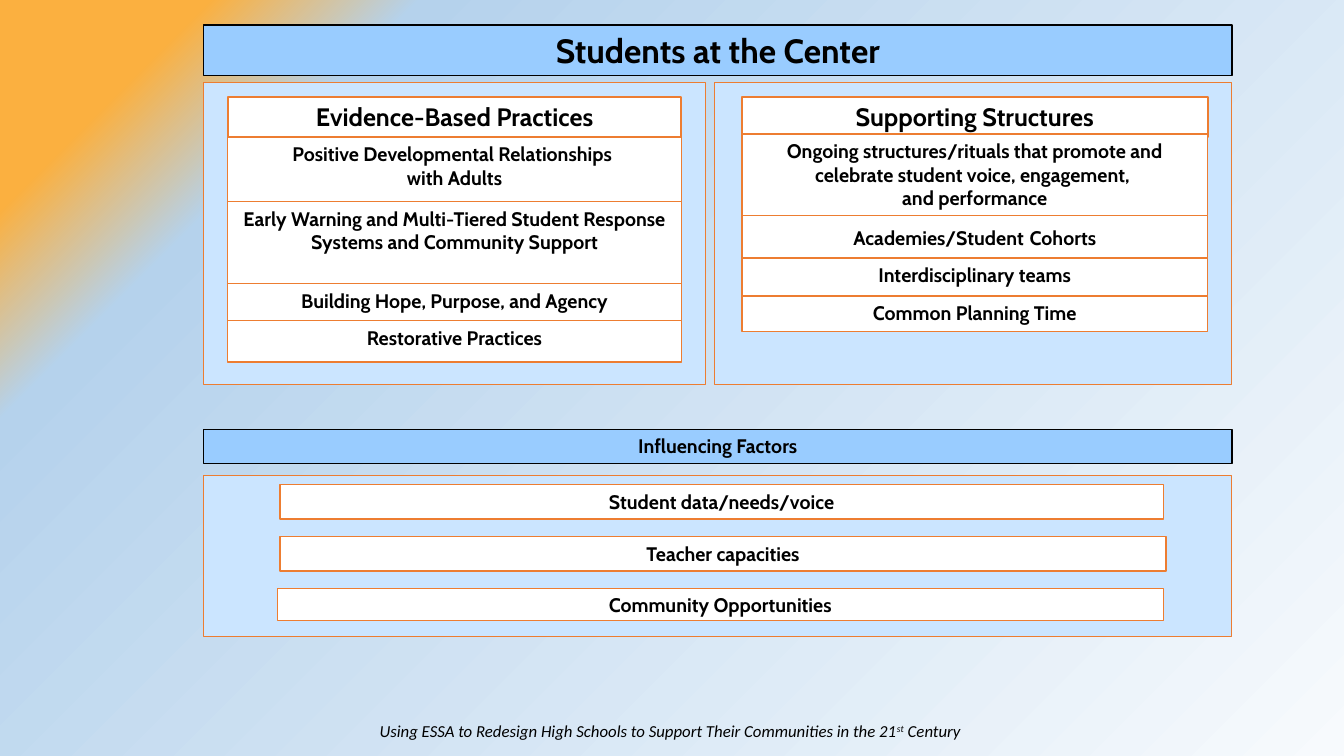
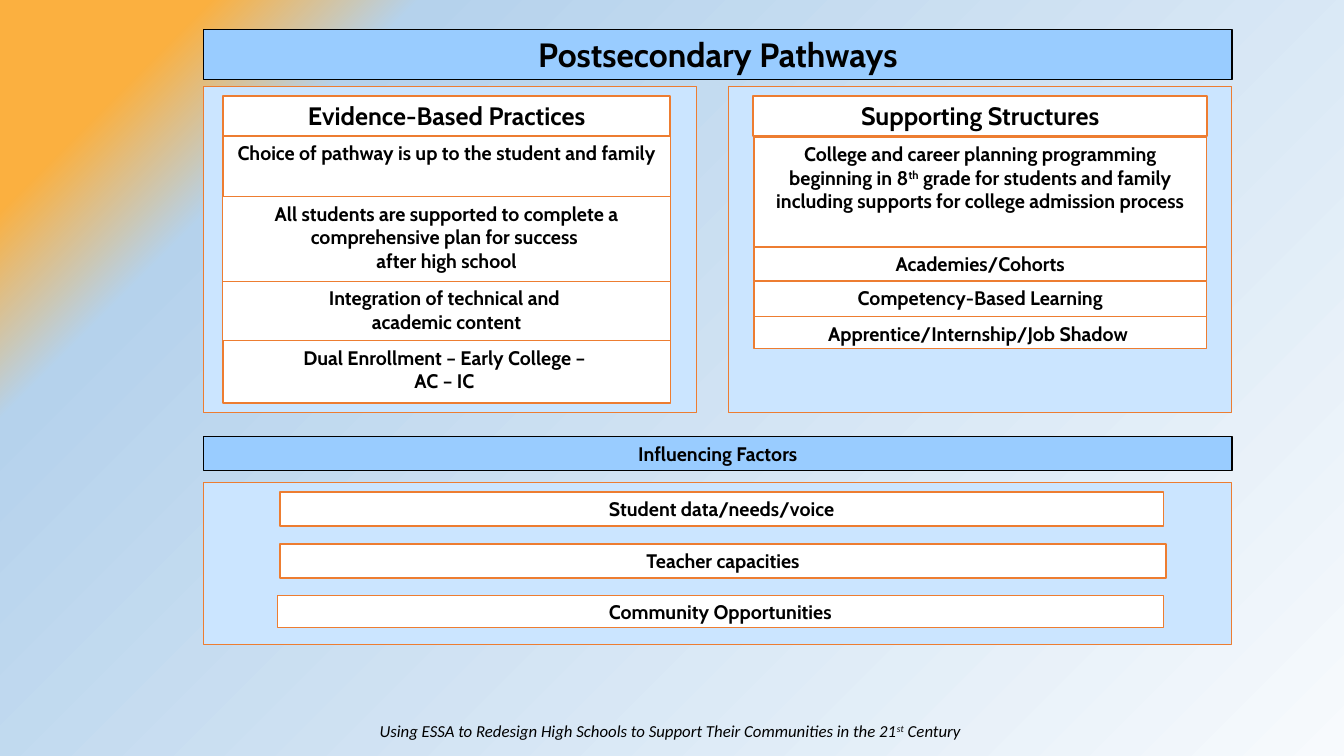
"""Build two framework slides on redesigning high schools."""
from dataclasses import dataclass

from pptx import Presentation
from pptx.dml.color import RGBColor
from pptx.enum import shapes, text
from pptx.oxml import parse_xml
from pptx.oxml.ns import nsdecls, qn
from pptx.util import Pt


@dataclass(frozen=True)
class Theme:
    """Colours, fonts and type sizes that the slides share."""
    ink: str = "000000"
    accent: str = "ED7D31"
    band: str = "99CCFF"
    panel: str = "CBE5FF"
    paper: str = "FFFFFF"
    backdrop: tuple = ((0, "F7FAFD"), (80, "B5D2EC"), (90, "FBB040"), (100, "FBB040"))
    font: str = "Cabin"
    footer_font: str = "Calibri"
    title: int = 24
    heading: int = 18
    body: int = 14
    footer: int = 12
    thin: float = 0.75
    line: float = 1
    heavy: float = 1.5


@dataclass(frozen=True)
class Piece:
    """A run that differs from its neighbours in size or is raised."""
    words: str
    size: float = None
    raised: bool = False


@dataclass(frozen=True)
class Row:
    """One box of a column, with its height and border weight."""
    height: float
    pieces: tuple
    weight: float = Theme.line


@dataclass(frozen=True)
class Column:
    """A panel holding a heading and the rows stacked below it."""
    heading: str
    panel_left: float
    panel_right: float
    head: tuple
    stack: tuple
    rows: tuple


@dataclass(frozen=True)
class Page:
    """The content and vertical layout of one slide."""
    title: str
    top: float
    panel_height: float
    factors_top: float
    columns: tuple


THEME = Theme()
WIDTH, HEIGHT = 960, 540
LEFT, RIGHT = 145.5, 880
HEAD_HEIGHT = 28.8
FACTOR_PITCH = 37.1
PRACTICES, STRUCTURES = "Evidence-Based Practices", "Supporting Structures"
FOOTER = (
    Piece("Using ESSA to Redesign High Schools to Support Their Communities in the 21"),
    Piece("st", raised=True),
    Piece(" Century "),
)
FACTORS = (
    ("Student data/needs/voice", 200, 631, 24.5, THEME.line),
    ("Teacher capacities", 200, 633, 24.5, THEME.line),
    ("Community Opportunities", 198, 633, 23, THEME.thin),
)
PAGES = (
    Page("Students at the Center", 18, 216, 306.7, (
        Column(PRACTICES, LEFT, 504, (162.7, 69.1, 324), (162.7, 97.9, 324), (
            Row(46.1, ("Positive Developmental Relationships \nwith Adults",)),
            Row(58.8, ("Early Warning and Multi-Tiered Student Response "
                       "Systems and Community Support",), THEME.thin),
            Row(26.2, ("Building Hope, Purpose, and Agency",), THEME.thin),
            Row(29.5, ("Restorative Practices",)),
        )),
        Column(STRUCTURES, 510.5, RIGHT, (530, 69.1, 332.6), (530, 95.8, 332.6), (
            Row(58.2, ("Ongoing structures/rituals that promote and celebrate "
                       "student voice, engagement, \nand performance",)),
            Row(30.2, ("Academies/Student", Piece(" ", THEME.heading), "Cohorts")),
            Row(27.2, ("Interdisciplinary teams",)),
            Row(25.2, ("Common Planning Time",)),
        )),
    )),
    Page("Postsecondary Pathways", 21, 232.5, 311.8, (
        Column(PRACTICES, LEFT, 497.5, (159.2, 68.4, 319.7), (159.2, 97.2, 319.7), (
            Row(43.2, ("Choice of pathway is up to the student and family",)),
            Row(60.5, ("All students are supported to complete a comprehensive "
                       "plan for success \nafter high school",), THEME.thin),
            Row(42.5, ("Integration of technical and \nacademic content",), THEME.thin),
            Row(44.6, ("Dual Enrollment – Early College – \nAC – IC ",)),
        )),
        Column(STRUCTURES, 520.5, RIGHT, (537.8, 68.4, 324.7), (538.6, 97.9, 323.3), (
            Row(78.5, ("College and career planning programming beginning in 8",
                       Piece("th", raised=True),
                       " grade for students and family including supports for "
                       "college admission process")),
            Row(24.5, ("Academies/Cohorts",)),
            Row(25.2, ("Competency-Based Learning",)),
            Row(23, ("Apprentice/Internship/Job Shadow ",)),
        )),
    )),
)


def write(frame, pieces, size, font=THEME.font, bold=True, italic=False):
    """Write the pieces as centred runs of one paragraph."""
    frame.word_wrap = True
    paragraph = frame.paragraphs[0]
    paragraph.alignment = text.PP_ALIGN.CENTER
    for piece in pieces:
        piece = Piece(piece) if isinstance(piece, str) else piece
        for number, words in enumerate(piece.words.split("\n")):
            if number:
                paragraph.add_line_break()
            run = paragraph.add_run()
            run.text = words
            run.font.name = font
            run.font.size = Pt(piece.size or size)
            run.font.bold, run.font.italic = bold, italic
            run.font.color.rgb = RGBColor.from_string(THEME.ink)
            if piece.raised:
                run.font._element.set("baseline", "30000")


def add_box(slide, area, fill, line, weight, pieces=(), size=THEME.body,
            anchor=text.MSO_ANCHOR.TOP):
    """Add a bordered rectangle, with text if there is any."""
    box = slide.shapes.add_shape(shapes.MSO_SHAPE.RECTANGLE, *map(Pt, area))
    box.shadow.inherit = False
    box.fill.solid()
    box.fill.fore_color.rgb = RGBColor.from_string(fill)
    box.line.color.rgb = RGBColor.from_string(line)
    box.line.width = Pt(weight)
    if pieces:
        box.text_frame.vertical_anchor = anchor
        write(box.text_frame, pieces, size)


def add_band(slide, top, height, words, size):
    """Add a full-width blue title band."""
    add_box(slide, (LEFT, top, RIGHT - LEFT, height), THEME.band, THEME.ink,
            THEME.line, (words,), size)


def add_panel(slide, left, top, right, height):
    """Add a pale panel that carries other boxes."""
    add_box(slide, (left, top, right - left, height), THEME.panel, THEME.accent, THEME.thin)


def add_column(slide, column, top, height):
    """Add a panel with its heading and stacked rows."""
    add_panel(slide, column.panel_left, top, column.panel_right, height)
    add_box(slide, (*column.head, HEAD_HEIGHT), THEME.paper, THEME.accent,
            THEME.heavy, (column.heading,), THEME.heading)
    left, row_top, width = column.stack
    for row in column.rows:
        add_box(slide, (left, row_top, width, row.height), THEME.paper,
                THEME.accent, row.weight, row.pieces)
        row_top += row.height


def add_factors(slide, top):
    """Add the influencing factors below their band."""
    add_panel(slide, LEFT, top + 33.1, RIGHT, 115.2)
    add_band(slide, top, 24.5, "Influencing Factors", THEME.body)
    for number, (words, left, width, height, weight) in enumerate(FACTORS):
        area = left, top + 39.6 + number * FACTOR_PITCH, width, height
        add_box(slide, area, THEME.paper, THEME.accent, weight, (words,),
                anchor=text.MSO_ANCHOR.MIDDLE)


def add_footer(slide):
    """Add the italic line at the foot of the slide."""
    footer = slide.shapes.add_textbox(Pt(0), Pt(511.2), Pt(WIDTH), Pt(21.6))
    write(footer.text_frame, FOOTER, THEME.footer, THEME.footer_font, False, True)


def set_backdrop(master):
    """Give the master a radial gradient centred on the lower right corner."""
    master.background.fill.solid()
    stops = "".join(f'<a:gs pos="{place * 1000}"><a:srgbClr val="{colour}"/></a:gs>'
                    for place, colour in THEME.backdrop)
    gradient = parse_xml(
        f'<a:gradFill {nsdecls("a")} rotWithShape="1"><a:gsLst>{stops}</a:gsLst>'
        '<a:path path="circle"><a:fillToRect l="100000" t="100000"/></a:path></a:gradFill>')
    solid = next(master.element.iter(qn("p:bgPr"))).find(qn("a:solidFill"))
    solid.getparent().replace(solid, gradient)


def add_page(deck, page):
    """Add one framework slide."""
    slide = deck.slides.add_slide(deck.slide_layouts[6])
    add_footer(slide)
    for column in page.columns:
        add_column(slide, column, page.top + 41, page.panel_height)
    add_band(slide, page.top, 36, page.title, THEME.title)
    add_factors(slide, page.factors_top)


def main():
    """Build and save the deck."""
    deck = Presentation()
    deck.slide_width, deck.slide_height = Pt(WIDTH), Pt(HEIGHT)
    set_backdrop(deck.slide_master)
    for page in PAGES:
        add_page(deck, page)
    deck.save("out.pptx")


if __name__ == "__main__":
    main()
